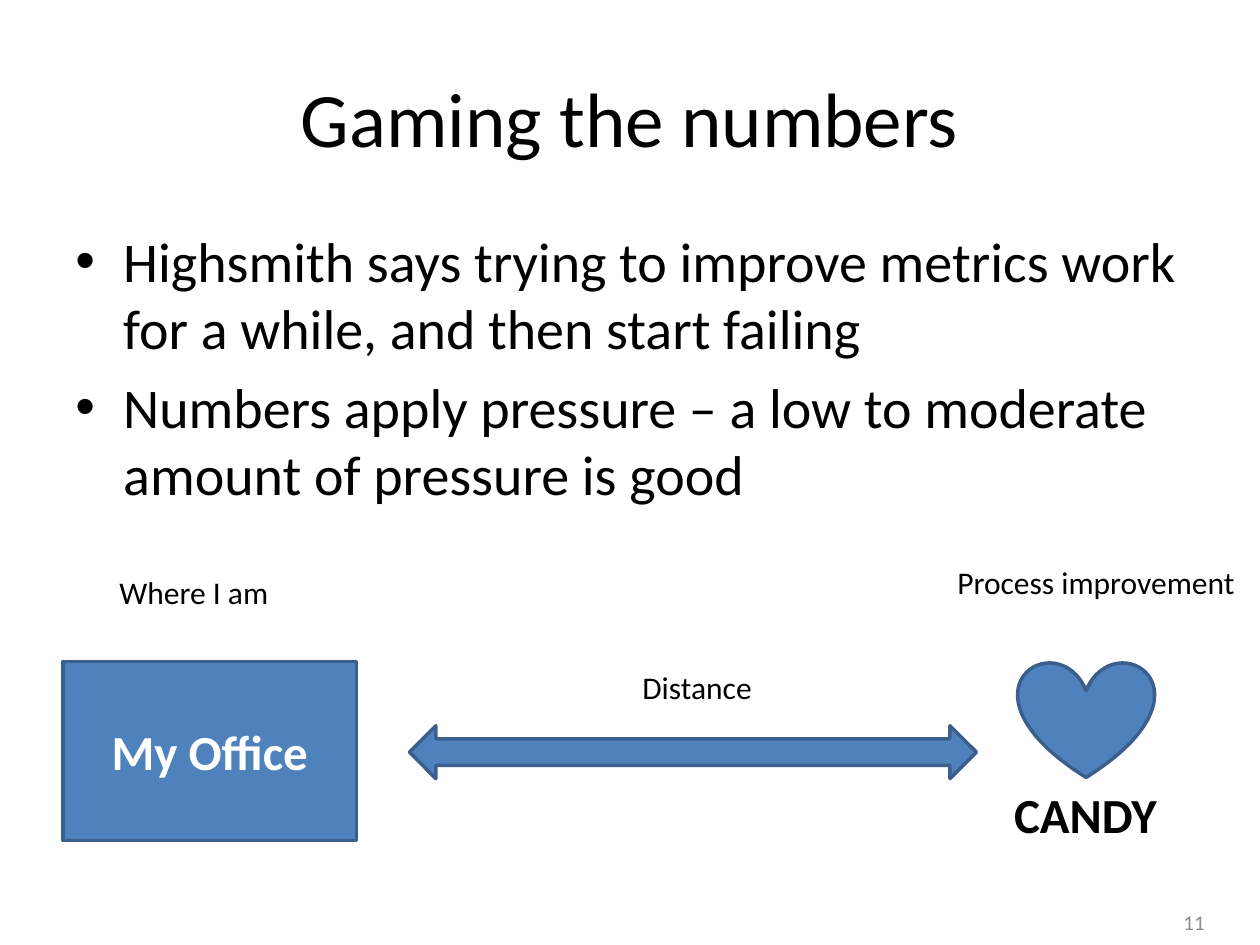
"""Build the "Gaming the numbers" slide: two bullets over a distance diagram."""
from dataclasses import dataclass

import pptx
import pptx.dml.color
import pptx.enum.shapes
import pptx.enum.text
import pptx.slide
import pptx.text.text
import pptx.util
from lxml import etree

Inches = pptx.util.Inches
Pt = pptx.util.Pt
Align = pptx.enum.text.PP_ALIGN
Anchor = pptx.enum.text.MSO_ANCHOR
Preset = pptx.enum.shapes.MSO_SHAPE

BLACK, WHITE, GREY = "000000", "FFFFFF", "8C8C8C"
BLUE, DARK_BLUE = "4F81BD", "3A5F8C"
BULLET_INDENT = Inches(0.38)


@dataclass(frozen=True)
class Box:
    left: float
    top: float
    width: float
    height: float

    def lengths(self) -> list[pptx.util.Length]:
        return [Inches(v) for v in (self.left, self.top, self.width, self.height)]


@dataclass(frozen=True)
class Label:
    box: Box
    lines: tuple[str, ...]
    size: int
    color: str = BLACK
    bold: bool = False
    align: Align = Align.LEFT
    anchor: Anchor = Anchor.TOP
    wrap: bool = True
    bulleted: bool = False


@dataclass(frozen=True)
class Figure:
    preset: Preset
    box: Box
    caption: str = ""


LABELS = (
    Label(Box(7.33, 7.12, 2.33, 0.4), ("11",), 12, GREY, align=Align.RIGHT, anchor=Anchor.MIDDLE),
    Label(Box(0.5, 0.3, 9, 1.25), ("Gaming the numbers",), 44, align=Align.CENTER, anchor=Anchor.MIDDLE),
    Label(
        Box(0.5, 1.75, 9, 4.95),
        (
            "Highsmith says trying to improve metrics work for a while, and then start failing",
            "Numbers apply pressure – a low to moderate amount of pressure is good",
        ),
        32,
        bulleted=True,
    ),
    Label(Box(7.95, 6.18, 1.35, 0.57), ("CANDY",), 28, bold=True, wrap=False),
    Label(Box(7.5, 4.42, 2.44, 0.4), ("Process improvement",), 18, wrap=False),
    Label(Box(0.85, 4.5, 1.4, 0.4), ("Where I am",), 18, wrap=False),
    Label(Box(5, 5.25, 1.08, 0.4), ("Distance",), 18, wrap=False),
)

FIGURES = (
    Figure(Preset.RECTANGLE, Box(0.5, 5.25, 2.33, 1.42), "My Office"),
    Figure(Preset.LEFT_RIGHT_ARROW, Box(3.25, 5.76, 4.5, 0.42)),
    Figure(Preset.HEART, Box(8.08, 5.25, 1.08, 0.92)),
)


def rgb(color: str) -> pptx.dml.color.RGBColor:
    return pptx.dml.color.RGBColor.from_string(color)


def apply_format(target: object, values: dict[str, object]) -> None:
    for attribute, value in values.items():
        setattr(target, attribute, value)


def add_bullet(paragraph: pptx.text.text._Paragraph) -> None:
    properties = paragraph._p.get_or_add_pPr()
    properties.set("marL", str(BULLET_INDENT))
    properties.set("indent", str(-BULLET_INDENT))
    for tag, name, value in (("buFont", "typeface", "Arial"), ("buChar", "char", "•")):
        etree.SubElement(properties, pptx.oxml.ns.qn(f"a:{tag}")).set(name, value)


def write_text(frame: pptx.text.text.TextFrame, label: Label) -> None:
    apply_format(frame, {"word_wrap": label.wrap, "vertical_anchor": label.anchor})
    for index, line in enumerate(label.lines):
        paragraph = frame.add_paragraph() if index else frame.paragraphs[0]
        paragraph.text = line
        paragraph.alignment = label.align
        if index:
            paragraph.space_before = Pt(label.size * 0.2)
        if label.bulleted:
            add_bullet(paragraph)
        apply_format(paragraph.font, {"name": "Calibri", "size": Pt(label.size), "bold": label.bold})
        paragraph.font.color.rgb = rgb(label.color)


def draw_label(slide: pptx.slide.Slide, label: Label) -> None:
    write_text(slide.shapes.add_textbox(*label.box.lengths()).text_frame, label)


def draw_figure(slide: pptx.slide.Slide, figure: Figure) -> None:
    shape = slide.shapes.add_shape(figure.preset, *figure.box.lengths())
    shape.shadow.inherit = False
    shape.fill.solid()
    shape.fill.fore_color.rgb = rgb(BLUE)
    shape.line.color.rgb = rgb(DARK_BLUE)
    shape.line.width = Pt(2)
    if figure.caption:
        caption = Label(figure.box, (figure.caption,), 28, WHITE, True, Align.CENTER, Anchor.MIDDLE)
        write_text(shape.text_frame, caption)


def main() -> None:
    presentation = pptx.Presentation()
    apply_format(presentation, {"slide_width": Inches(10), "slide_height": Inches(7.5)})
    slide = presentation.slides.add_slide(presentation.slide_layouts[6])
    for label in LABELS:
        draw_label(slide, label)
    for figure in FIGURES:
        draw_figure(slide, figure)
    presentation.save("out.pptx")


if __name__ == "__main__":
    main()
